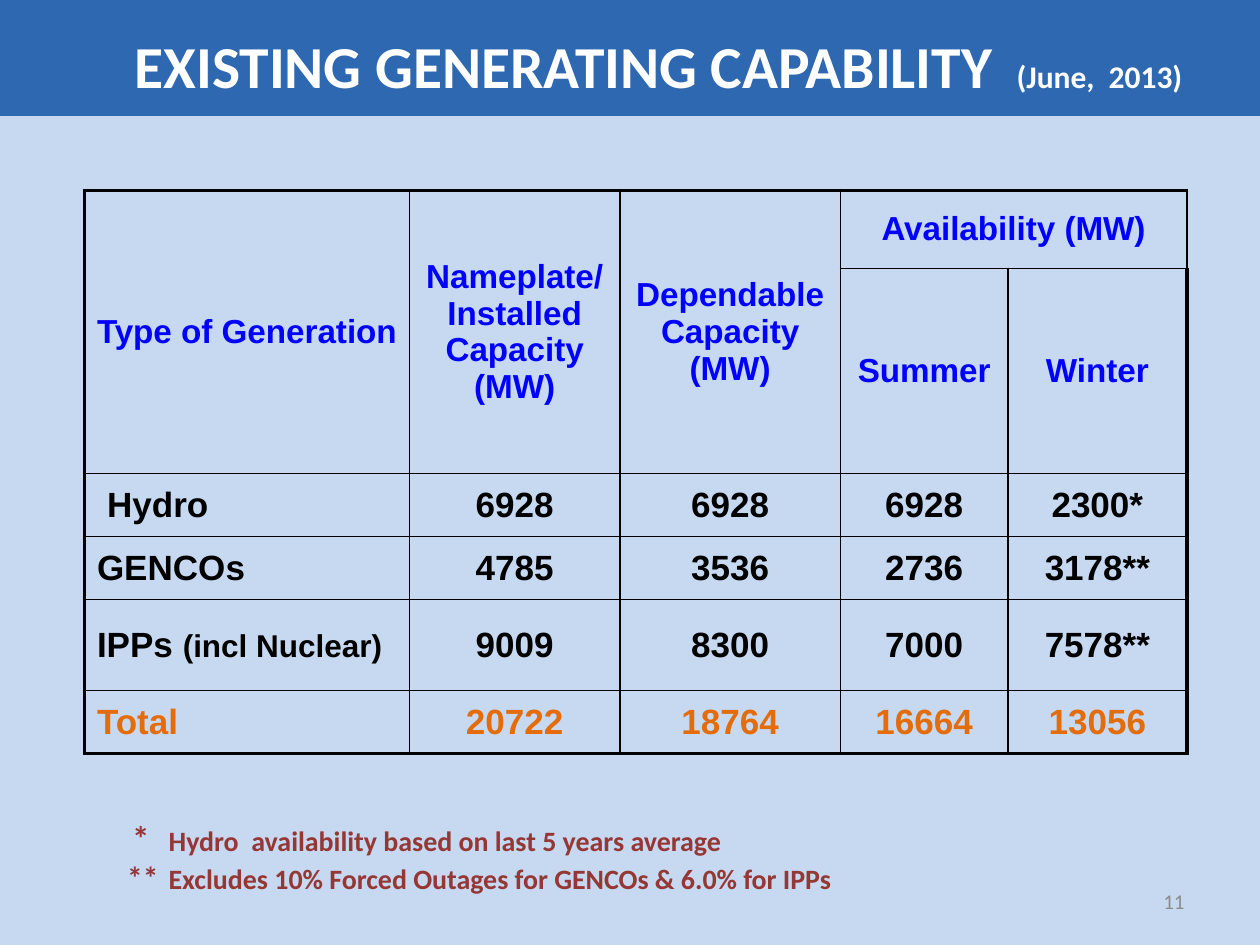
"""Build the slide on existing generating capability."""
from lxml import etree
from pptx import Presentation
from pptx import util as u
from pptx.dml.color import RGBColor
from pptx.enum import shapes, text
from pptx.oxml.ns import qn

HUES = {"back": "C6D9F1", "bar": "2D68B1", "white": "FFFFFF", "head": "0000FF",
        "ink": "000000", "total": "E46C0A", "note": "953735", "page": "8C8C8C"}
TITLE = [("EXISTING GENERATING CAPABILITY", 34), ("\t", 44), ("(June,  2013)", 18)]
NOTES = [
    (0.29, [("*", 20), ("\t", 14), ("Hydro  availability based on last 5 years average", 16)]),
    (0.33, [("**", 18), ("\t", 14),
            ("Excludes 10% Forced Outages for GENCOs & 6.0% for IPPs", 16)]),
]
HEADS = [
    ["Type of Generation", "Nameplate/ Installed Capacity (MW)",
     "Dependable Capacity (MW)", "Availability (MW)", ""],
    ["", "", "", "Summer", "Winter"],
]
BODY = [
    ["Hydro", "6928", "6928", "6928", "2300*"],
    ["GENCOs", "4785", "3536", "2736", "3178**"],
    ["IPPs ", "9009", "8300", "7000", "7578**"],
    ["Total", "20722", "18764", "16664", "13056"],
]
EXTRA = {"IPPs ": "(incl Nuclear)"}
COLS = [2.58, 1.67, 1.75, 1.33, 1.42]
ROWS = [0.62, 1.63, 0.5, 0.5, 0.72, 0.5]
MERGES = [(0, 0, 1, 0), (0, 1, 1, 1), (0, 2, 1, 2), (0, 3, 0, 4)]
ALIGN = text.PP_ALIGN
MIDDLE = text.MSO_ANCHOR.MIDDLE


def box(at):
    return [u.Inches(n) for n in at]


def write(para, runs, hue, font="Calibri", bold=True):
    for words, size in runs:
        run = para.add_run()
        run.text = words
        run.font.size = u.Pt(size)
        run.font.name = font
        run.font.bold = bold
        run.font.color.rgb = RGBColor.from_string(HUES[hue])


def indent(para, left, first=0.0, tab=None):
    props = para._p.get_or_add_pPr()
    props.set("marL", str(u.Inches(left)))
    props.set("indent", str(u.Inches(first)))
    if tab:
        tabs = etree.SubElement(props, qn("a:tabLst"))
        etree.SubElement(tabs, qn("a:tab"), pos=str(u.Inches(tab)), algn="l")


def border(cell, row, col):
    props = cell._tc.get_or_add_tcPr()
    outer = {"L": col == 0, "R": col == len(COLS) - 1,
             "T": row == 0, "B": row == len(ROWS) - 1}
    for side, edge in outer.items():
        line = etree.SubElement(props, qn("a:ln" + side),
                                w=str(u.Pt(2.25 if edge else 1)))
        fill = etree.SubElement(line, qn("a:solidFill"))
        etree.SubElement(fill, qn("a:srgbClr"), val=HUES["ink"])


def add_title(slide):
    bar = slide.shapes.add_shape(shapes.MSO_SHAPE.RECTANGLE, *box((0, 0, 10, 0.92)))
    bar.shadow.inherit = False
    bar.fill.solid()
    bar.fill.fore_color.rgb = RGBColor.from_string(HUES["bar"])
    bar.line.fill.background()
    frame = bar.text_frame
    frame.vertical_anchor = MIDDLE
    para = frame.paragraphs[0]
    para.alignment = ALIGN.LEFT
    indent(para, 0.97, tab=8.13)
    write(para, TITLE, "white")


def add_notes(slide):
    frame = slide.shapes.add_textbox(*box((0.67, 6.43, 8.58, 0.76))).text_frame
    frame.word_wrap = True
    for n, (hang, runs) in enumerate(NOTES):
        para = frame.add_paragraph() if n else frame.paragraphs[0]
        indent(para, 0.57, -hang, tab=0.57)
        write(para, runs, "note")


def add_grid(slide):
    data = HEADS + BODY
    at = box((0.67, 1.51, sum(COLS), sum(ROWS)))
    grid = slide.shapes.add_table(len(ROWS), len(COLS), *at).table
    for col, wide in zip(grid.columns, COLS):
        col.width = u.Inches(wide)
    for row, high in zip(grid.rows, ROWS):
        row.height = u.Inches(high)
    for top, left, low, right in MERGES:
        grid.cell(top, left).merge(grid.cell(low, right))
    for r, line in enumerate(data):
        head = r < len(HEADS)
        hue = "head" if head else "total" if line[0] == "Total" else "ink"
        for c, words in enumerate(line):
            cell = grid.cell(r, c)
            border(cell, r, c)
            cell.fill.background()
            cell.vertical_anchor = MIDDLE
            if not words:
                continue
            para = cell.text_frame.paragraphs[0]
            para.alignment = ALIGN.CENTER if head or c else ALIGN.LEFT
            if words == "Hydro":
                indent(para, 0.08)
            runs = [(words, 19 if head else 20)]
            if words in EXTRA:
                runs.append((EXTRA[words], 18))
            write(para, runs, hue, "Arial")


def add_page(slide):
    frame = slide.shapes.add_textbox(*box((7.17, 6.95, 2.33, 0.4))).text_frame
    frame.word_wrap = True
    frame.vertical_anchor = MIDDLE
    para = frame.paragraphs[0]
    para.alignment = ALIGN.RIGHT
    write(para, [("11", 12)], "page", bold=False)


def main():
    deck = Presentation()
    deck.slide_width, deck.slide_height = u.Inches(10), u.Inches(7.5)
    slide = deck.slides.add_slide(deck.slide_layouts[6])
    slide.background.fill.solid()
    slide.background.fill.fore_color.rgb = RGBColor.from_string(HUES["back"])
    add_title(slide)
    add_notes(slide)
    add_grid(slide)
    add_page(slide)
    deck.save("out.pptx")


if __name__ == "__main__":
    main()
